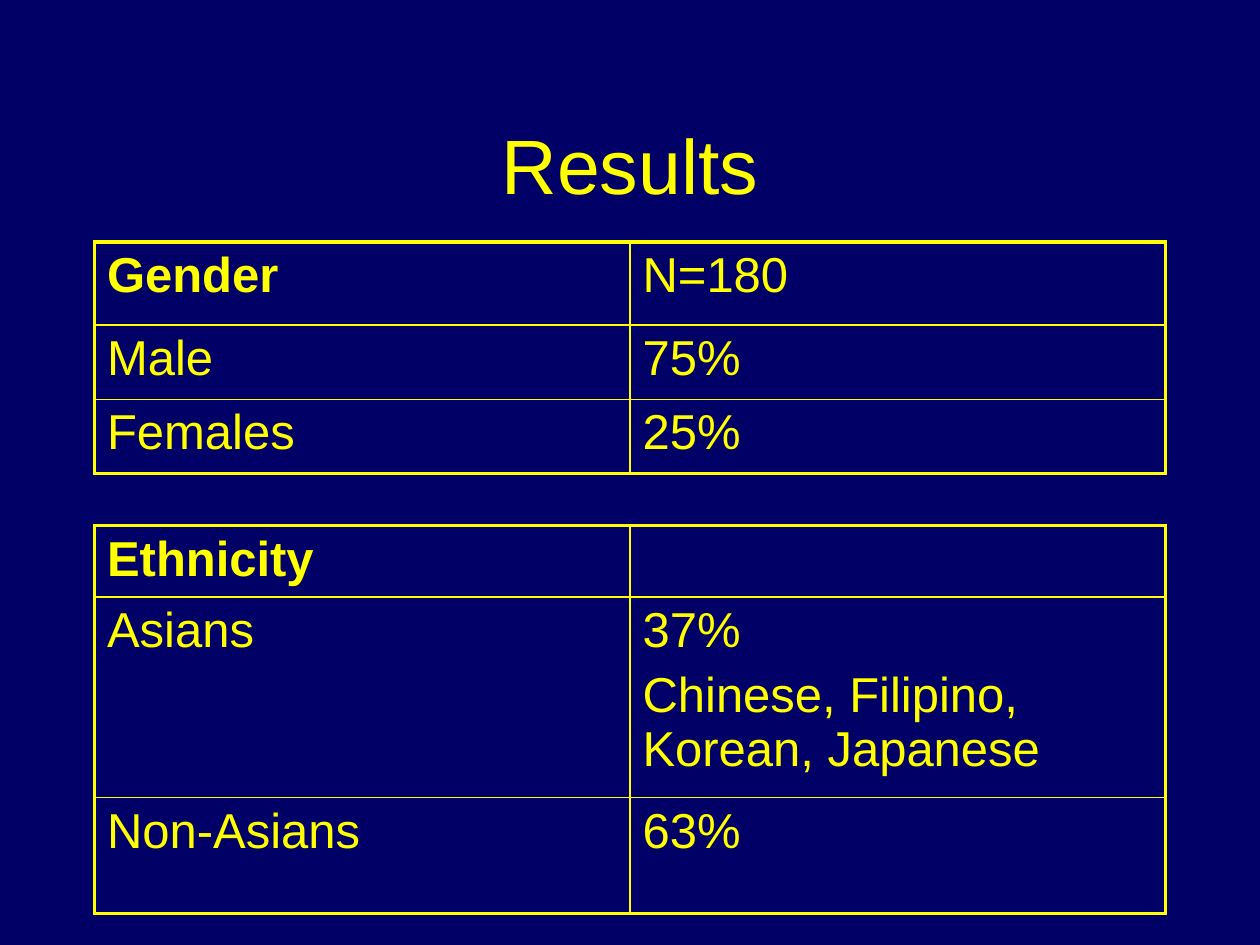
from dataclasses import dataclass

import lxml.etree
import pptx
import pptx.dml.color
import pptx.enum.text
import pptx.oxml.ns
import pptx.util

Inches = pptx.util.Inches
Pt = pptx.util.Pt
qn = pptx.oxml.ns.qn


@dataclass(frozen=True)
class Theme:
    background: str = "000066"
    ink: str = "FFFF00"
    font: str = "Arial"
    title_size: float = 44
    body_size: float = 28
    outer_line: float = 2.25
    inner_line: float = 1
    space_before: int = 20  # percent of a line


@dataclass(frozen=True)
class ResultTable:
    top: float
    row_heights: tuple[float, ...]
    rows: tuple[tuple[str, str], ...]  # a line break starts a new paragraph


THEME = Theme()
LEFT, WIDTH = 0.75, 8.5
TABLES = (
    ResultTable(1.92, (0.66, 0.59, 0.59),
                (("Gender", "N=180"), ("Male", "75%"), ("Females", "25%"))),
    ResultTable(4.17, (0.57, 1.59, 0.92),
                (("Ethnicity", ""),
                 ("Asians", "37%\nChinese, Filipino, Korean, Japanese"),
                 ("Non-Asians", "63%"))),
)


def add_run(p, text: str, size: float, bold: bool = False) -> None:
    r = p.add_run()
    r.text = text
    r.font.name = THEME.font
    r.font.size = Pt(size)
    r.font.bold = bold
    r.font.color.rgb = pptx.dml.color.RGBColor.from_string(THEME.ink)


def set_space_before(p, percent: int) -> None:
    """Set paragraph spacing relative to the line height."""
    before = lxml.etree.SubElement(p._p.get_or_add_pPr(), qn("a:spcBef"))
    lxml.etree.SubElement(before, qn("a:spcPct"), val=str(percent * 1000))


def set_border(cell, side: str, width: float) -> None:
    line = lxml.etree.SubElement(cell._tc.get_or_add_tcPr(), qn(f"a:ln{side}"),
                                 w=str(Pt(width)))
    fill = lxml.etree.SubElement(line, qn("a:solidFill"))
    lxml.etree.SubElement(fill, qn("a:srgbClr"), val=THEME.ink)


def add_title(s, text: str) -> None:
    box = s.shapes.add_textbox(Inches(LEFT), Inches(0.67),
                               Inches(WIDTH), Inches(1.25))
    tf = box.text_frame
    tf.word_wrap = True
    tf.vertical_anchor = pptx.enum.text.MSO_ANCHOR.MIDDLE
    p = tf.paragraphs[0]
    p.alignment = pptx.enum.text.PP_ALIGN.CENTER
    add_run(p, text, THEME.title_size)


def add_result_table(s, data: ResultTable) -> None:
    n_rows, n_cols = len(data.rows), len(data.rows[0])
    table = s.shapes.add_table(n_rows, n_cols, Inches(LEFT), Inches(data.top),
                               Inches(WIDTH), Inches(sum(data.row_heights))).table
    table.first_row = table.horz_banding = False
    for column in table.columns:
        column.width = Inches(WIDTH / n_cols)
    for i, height in enumerate(data.row_heights):
        table.rows[i].height = Inches(height)
        for j, text in enumerate(data.rows[i]):
            cell = table.cell(i, j)
            # Heavy lines around the table, thin lines inside
            edges = {"L": j == 0, "R": j == n_cols - 1,
                     "T": i == 0, "B": i == n_rows - 1}
            for side, outer in edges.items():
                set_border(cell, side,
                           THEME.outer_line if outer else THEME.inner_line)
            cell.fill.background()
            # Only the heading in the top left cell is bold
            tf = cell.text_frame
            for k, line in enumerate(text.split("\n") if text else ()):
                p = tf.add_paragraph() if k else tf.paragraphs[0]
                set_space_before(p, THEME.space_before)
                add_run(p, line, THEME.body_size, bold=i == j == 0)


def main() -> None:
    prs = pptx.Presentation()
    prs.slide_width, prs.slide_height = Inches(10), Inches(7.5)
    s = prs.slides.add_slide(prs.slide_layouts[6])

    # Background
    fill = s.background.fill
    fill.solid()
    fill.fore_color.rgb = pptx.dml.color.RGBColor.from_string(THEME.background)

    # Title and tables
    add_title(s, "Results")
    for data in TABLES:
        add_result_table(s, data)

    prs.save("out.pptx")


if __name__ == "__main__":
    main()
